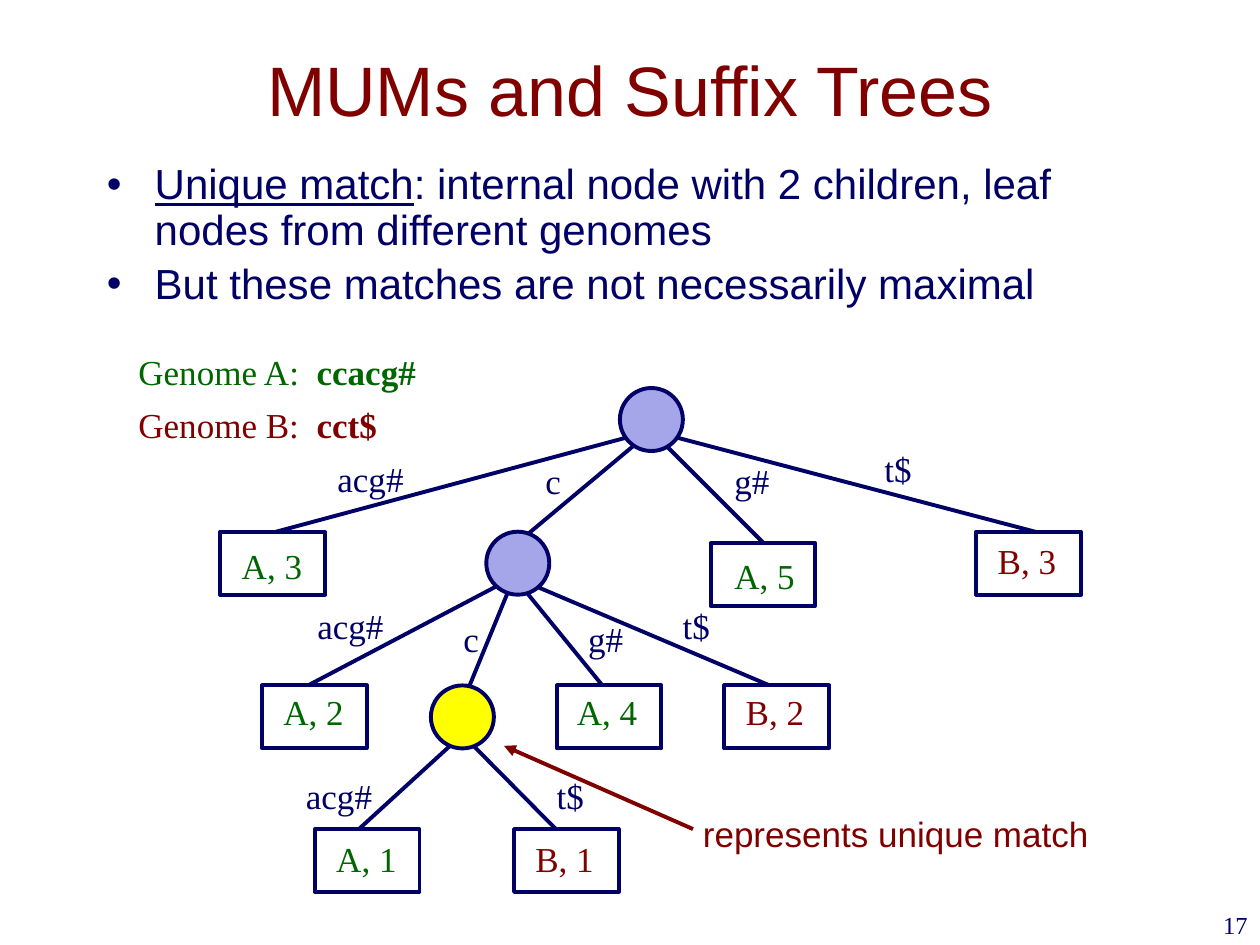
from lxml.etree import SubElement
from pptx import Presentation
from pptx.dml.color import RGBColor
from pptx.enum.shapes import MSO_CONNECTOR, MSO_SHAPE
from pptx.enum.text import MSO_ANCHOR, MSO_AUTO_SIZE, PP_ALIGN
from pptx.oxml.ns import qn
from pptx.util import Pt

PX = 9144  # 100 px to the inch
NAVY, MAROON, GREEN = "000066", "800000", "006600"
LILAC, YELLOW, WHITE = "A5A5E9", "FFFF00", "FFFFFF"
SANS, SERIF = "Arial", "Times New Roman"


def rgb(code):
    return RGBColor.from_string(code)


def px(*lengths):
    return [length * PX for length in lengths]


class TreeSlide:
    stroke = Pt(2.25)

    def __init__(self, deck):
        self.page = deck.slides.add_slide(deck.slide_layouts[6])

    def text(self, area, paragraphs, color, size=20, font=SERIF, wrap=False,
             align=PP_ALIGN.LEFT, anchor=MSO_ANCHOR.TOP, bullet=False):
        """Each paragraph is a list of (words, font settings) spans."""
        box = self.page.shapes.add_textbox(*px(*area))
        frame = box.text_frame
        frame.word_wrap = wrap
        frame.auto_size = MSO_AUTO_SIZE.NONE if wrap else MSO_AUTO_SIZE.SHAPE_TO_FIT_TEXT
        frame.vertical_anchor = anchor
        for index, spans in enumerate(paragraphs):
            para = frame.add_paragraph() if index else frame.paragraphs[0]
            if bullet:
                self.add_bullet(para)
            para.alignment = align
            para.font.size, para.font.name = Pt(size), font
            para.font.color.rgb = rgb(color)
            for words, settings in spans:
                span = para.add_run()
                span.text = words
                for name, value in settings.items():
                    setattr(span.font, name, value)

    def add_bullet(self, para):
        props = para._p.get_or_add_pPr()
        props.set("marL", str(38 * PX))
        props.set("indent", str(-38 * PX))
        SubElement(props, qn("a:buFont"), typeface=SANS)
        SubElement(props, qn("a:buChar"), char="•")
        para.line_spacing = 0.9
        para.space_before = Pt(4.8)

    def label(self, left, top, words, color=NAVY, width=70):
        self.text((left, top, width, 43), [[(words, {})]], color)

    def node(self, kind, left, top, width, fill):
        shape = self.page.shapes.add_shape(kind, *px(left, top, width, 50))
        shape.shadow.inherit = False
        shape.fill.solid()
        shape.fill.fore_color.rgb = rgb(fill)
        shape.line.color.rgb = rgb(NAVY)
        shape.line.width = self.stroke

    def line(self, start, end, color=NAVY, arrow=False):
        edge = self.page.shapes.add_connector(MSO_CONNECTOR.STRAIGHT, *px(*start, *end))
        edge.line.color.rgb = rgb(color)
        edge.line.width = self.stroke
        if arrow:
            SubElement(edge.line._get_or_add_ln(), qn("a:tailEnd"), type="triangle")
        SubElement(edge._element.spPr, qn("a:effectLst"))


# Branches: start point, then the end points of its edges
BRANCHES = [
    ((517, 342), [(208, 425), (408, 433), (608, 433), (833, 425)]),
    ((408, 458), [(233, 550), (367, 558), (483, 550), (625, 550)]),
    ((367, 583), [(275, 667), (450, 667)]),
]
CIRCLES = [(492, 308, LILAC), (386, 422, LILAC), (342, 544, YELLOW)]
# Leaves: box left and top, label left and top, label
LEAVES = [
    (175, 422, 182, 427, "A, 3"), (564, 431, 573, 435, "A, 5"),
    (775, 422, 782, 423, "B, 3"), (208, 544, 215, 543, "A, 2"),
    (442, 544, 448, 543, "A, 4"), (575, 544, 582, 543, "B, 2"),
    (250, 658, 257, 660, "A, 1"), (408, 658, 415, 660, "B, 1"),
]
EDGE_LABELS = [
    (258, 358, "acg#"), (423, 360, "c"), (573, 360, "g#"), (692, 350, "t$"),
    (242, 475, "acg#"), (358, 485, "c"), (457, 485, "g#"), (532, 475, "t$"),
    (233, 610, "acg#"), (432, 610, "t$"),
]
LABEL_WIDTHS = {"acg#": 73, "c": 32, "g#": 48, "t$": 42}
GENOME_COLORS = {"A": GREEN, "B": MAROON}


def main():
    deck = Presentation()
    deck.slide_width, deck.slide_height = px(1000, 750)
    slide = TreeSlide(deck)

    # Title and bullets
    slide.text((75, 8, 850, 125), [[("MUMs and Suffix Trees", {})]], MAROON, 40, SANS,
               wrap=True, align=PP_ALIGN.CENTER, anchor=MSO_ANCHOR.MIDDLE)
    slide.text((75, 125, 850, 133), [
        [("Unique match", {"underline": True}),
         (": internal node with 2 children, leaf nodes from different genomes", {})],
        [("But these matches are not necessarily maximal", {})],
    ], NAVY, 24, SANS, wrap=True, bullet=True)

    # Tree: edges behind, then nodes, then labels
    for start, ends in BRANCHES:
        for end in ends:
            slide.line(start, end)
    for left, top, fill in CIRCLES:
        slide.node(MSO_SHAPE.OVAL, left, top, 50, fill)
    for left, top, *_ in LEAVES:
        slide.node(MSO_SHAPE.RECTANGLE, left, top, 83, WHITE)
    for left, top, words in EDGE_LABELS:
        slide.label(left, top, words, width=LABEL_WIDTHS[words])
    for _, _, left, top, words in LEAVES:
        slide.label(left, top, words, GENOME_COLORS[words[0]], width=68)

    # Genome sequences
    for name, sequence, top, width in [("A", "ccacg#", 273, 241), ("B", "cct$", 315, 209)]:
        slide.text((100, top, width, 43),
                   [[(f"Genome {name}:  ", {}), (sequence, {"bold": True})]],
                   GENOME_COLORS[name])

    # Callout and page number
    slide.text((548, 640, 329, 44), [[("represents unique match", {})]], MAROON, font=SANS)
    slide.line((550, 658), (400, 592), MAROON, arrow=True)
    slide.text((792, 717, 208, 50), [[("17", {})]], NAVY, 14, wrap=True,
               align=PP_ALIGN.RIGHT)

    deck.save("out.pptx")


if __name__ == "__main__":
    main()
